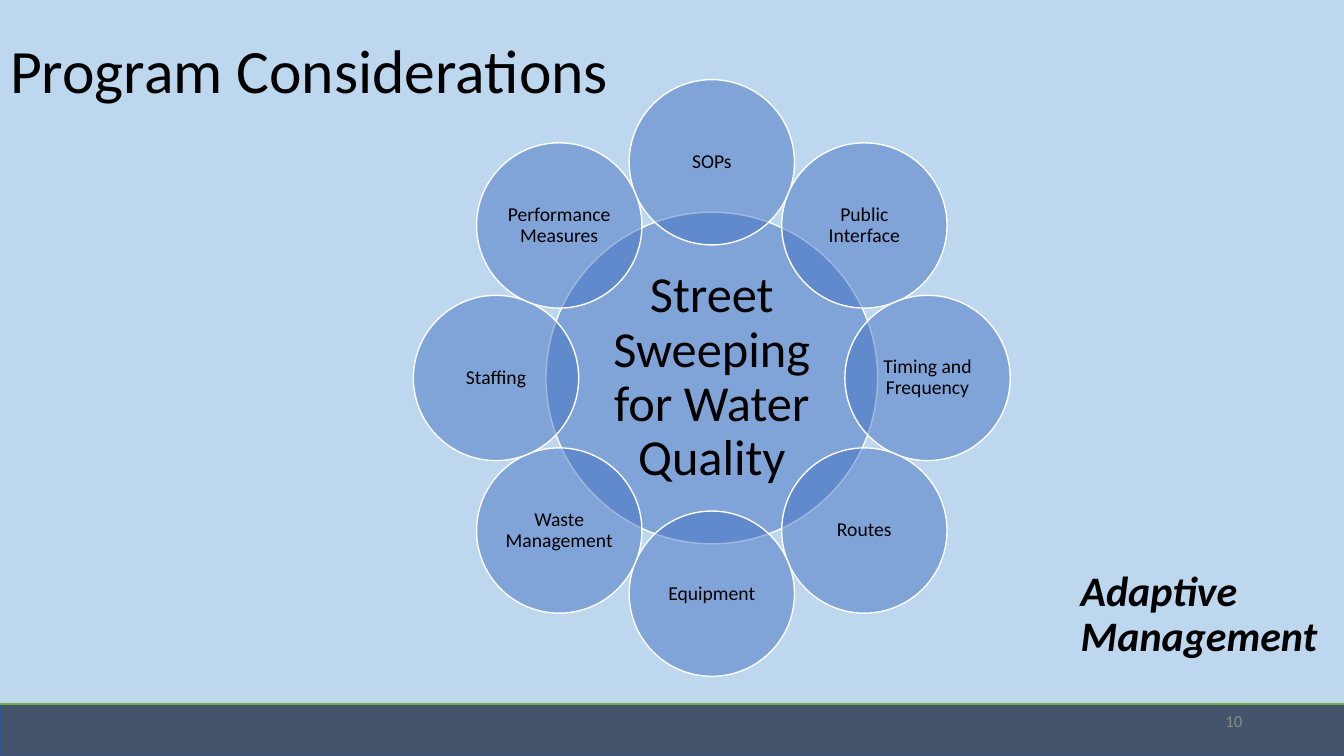
"""Build the Program Considerations slide with its radial cycle of circles."""
import math

import lxml.etree
import pptx
import pptx.dml.color
import pptx.enum.shapes
import pptx.enum.text
import pptx.oxml.ns
import pptx.util

Inches = pptx.util.Inches
Pt = pptx.util.Pt
Align = pptx.enum.text.PP_ALIGN
Shapes = pptx.enum.shapes.MSO_SHAPE
COLORS = {
    "sky": "BDD7EE", "bar": "44546A", "bar_edge": "325491", "rule": "70AD47",
    "circle": "4472C4", "outline": "FFFFFF", "text": "000000", "number": "8C8C8C",
}
CENTER_X, CENTER_Y, ORBIT = 7.06, 3.75, 2.14
TOPICS = [
    "SOPs", "Public Interface", "Timing and Frequency", "Routes",
    "Equipment", "Waste Management", "Staffing", "Performance Measures",
]


def color(name):
    return pptx.dml.color.RGBColor.from_string(COLORS[name])


def write(shape, text, size, align, spacing=0.9, ink="text", inset=None):
    frame = shape.text_frame
    frame.text = text
    frame.word_wrap = True
    frame.auto_size = pptx.enum.text.MSO_AUTO_SIZE.NONE
    frame.vertical_anchor = pptx.enum.text.MSO_ANCHOR.MIDDLE
    if inset is not None:
        frame.margin_left = frame.margin_right = Inches(inset)
        frame.margin_top = frame.margin_bottom = Inches(inset)
    for para in frame.paragraphs:
        para.alignment = align
        para.line_spacing = spacing
        para.font.name = "Calibri"
        para.font.size = Pt(size)
        para.font.color.rgb = color(ink)


deck = pptx.Presentation()
deck.slide_width, deck.slide_height = Inches(13.33), Inches(7.5)
page = deck.slides.add_slide(deck.slide_layouts[5])
page.background.fill.solid()
page.background.fill.fore_color.rgb = color("sky")

bar = page.shapes.add_shape(Shapes.RECTANGLE, 0, Inches(6.99), Inches(13.33), Inches(0.51))
bar.shadow.inherit = False
bar.fill.solid()
bar.fill.fore_color.rgb = color("bar")
bar.line.color.rgb = color("bar_edge")
bar.line.width = Pt(1)

rule = page.shapes.add_connector(
    pptx.enum.shapes.MSO_CONNECTOR.STRAIGHT, 0, Inches(6.98), Inches(13.33), Inches(6.98))
rule.line.color.rgb = color("rule")
rule.line.width = Pt(1.5)
lxml.etree.SubElement(rule._element.spPr, pptx.oxml.ns.qn("a:effectLst"))

title = page.shapes.title
title.left, title.top, title.width, title.height = 0, 0, Inches(11.5), Inches(1.45)
write(title, "Program Considerations", 44, Align.LEFT)

number = page.shapes.add_textbox(Inches(9.42), Inches(6.95), Inches(3), Inches(0.4))
write(number, "10", 12, Align.RIGHT, spacing=1.0, ink="number")

circles = [("Street Sweeping for Water Quality", CENTER_X, CENTER_Y, 3.29, 36, 0.05)]
for index, topic in enumerate(TOPICS):
    angle = 2 * math.pi * index / len(TOPICS)
    x = CENTER_X + ORBIT * math.sin(angle)
    y = CENTER_Y - ORBIT * math.cos(angle)
    circles.append((topic, x, y, 1.64, 14, 0.02))

for label, x, y, diameter, size, inset in circles:
    circle = page.shapes.add_shape(
        Shapes.OVAL, Inches(x - diameter / 2), Inches(y - diameter / 2),
        Inches(diameter), Inches(diameter))
    circle.shadow.inherit = False
    circle.fill.solid()
    circle.fill.fore_color.rgb = color("circle")
    tint = circle._element.spPr.find(".//" + pptx.oxml.ns.qn("a:srgbClr"))
    lxml.etree.SubElement(tint, pptx.oxml.ns.qn("a:alpha"), val="50000")
    circle.line.color.rgb = color("outline")
    circle.line.width = Pt(1)
    write(circle, label, size, Align.CENTER, inset=inset)

motto = page.shapes.add_textbox(Inches(10.62), Inches(5.38), Inches(2.71), Inches(1.45))
write(motto, "Adaptive\nManagement", 30, Align.LEFT)
for para in motto.text_frame.paragraphs:
    para.font.bold = para.font.italic = True

deck.save("out.pptx")
